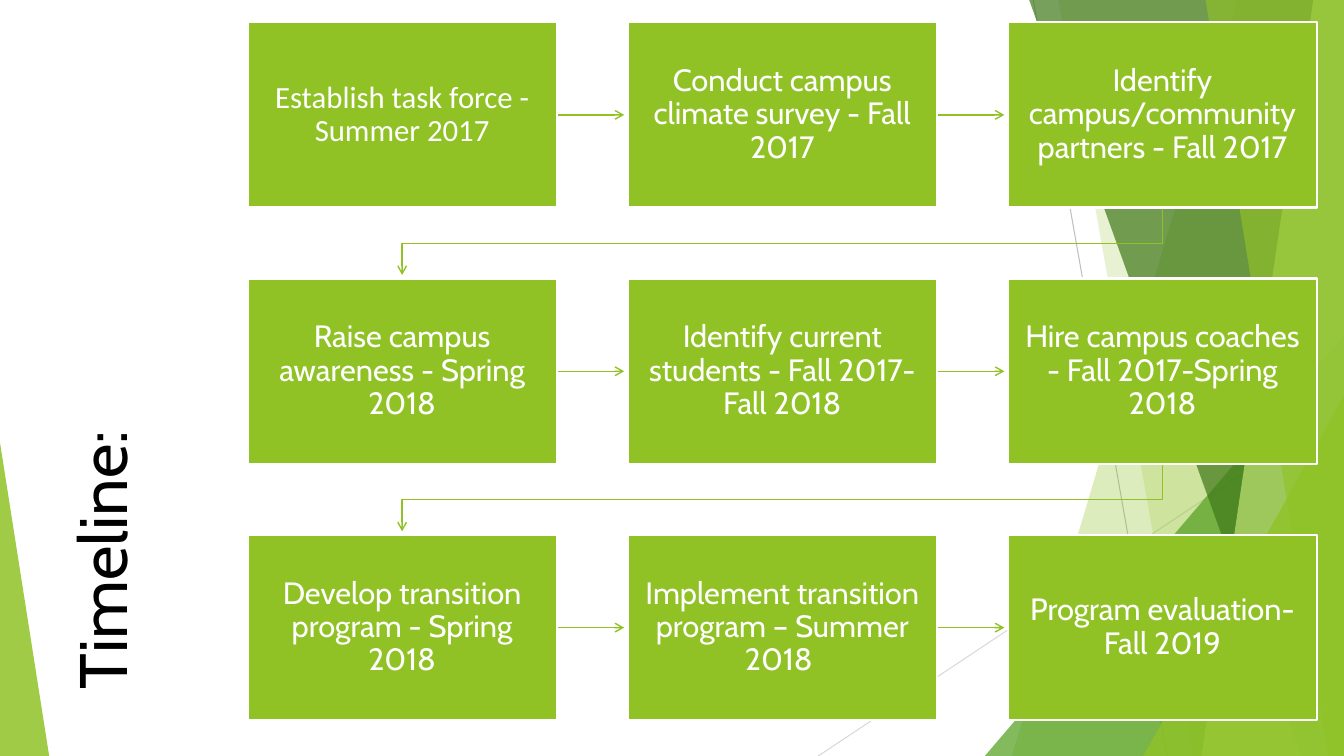
from dataclasses import dataclass

from lxml import etree
from pptx import Presentation
from pptx import util as u
from pptx.dml.color import RGBColor
from pptx.enum import shapes, text
from pptx.oxml import ns
from pptx.util import Cm


@dataclass(frozen=True)
class Theme:
    lime: str = "90C226"
    leaf: str = "54A021"
    moss: str = "3F7819"
    pale: str = "C0E474"
    white: str = "FFFFFF"
    black: str = "000000"
    font: str = "Cabin"
    step: int = 22
    title: int = 48


THEME = Theme()
WIDE, HIGH = 33.87, 19.05
LEFT, TOP = 6.24, 0.56
BOX_W, BOX_H = 7.79, 4.67
STEP_X, STEP_Y = 9.58, 6.46
REACH, BEND = 1.7, 0.9
COLS = 3

STEPS = [
    ("Establish task force - Summer 2017", "Calibri"),
    ("Conduct campus climate survey - Fall 2017", THEME.font),
    ("Identify campus/community partners - Fall 2017", THEME.font),
    ("Raise campus awareness - Spring 2018", THEME.font),
    ("Identify current students - Fall 2017-Fall 2018", THEME.font),
    ("Hire campus coaches - Fall 2017-Spring 2018", THEME.font),
    ("Develop transition program - Spring 2018", THEME.font),
    ("Implement transition program – Summer 2018 ", THEME.font),
    ("Program evaluation- Fall 2019", THEME.font),
]


def paint(shape, color, alpha=100):
    shape.shadow.inherit = False
    shape.fill.solid()
    shape.fill.fore_color.rgb = RGBColor.from_string(color)
    shape.line.fill.background()
    if alpha < 100:
        tint = shape.fill._xPr.find(".//" + ns.qn("a:srgbClr"))
        etree.SubElement(tint, ns.qn("a:alpha")).set("val", str(alpha * 1000))


def stroke(line, color, width):
    line.color.rgb = RGBColor.from_string(color)
    line.width = u.Pt(width)


def add_head(line):
    etree.SubElement(line._get_or_add_ln(), ns.qn("a:tailEnd")).set("type", "arrow")


def write(shape, words, font, size, color):
    frame = shape.text_frame
    frame.text = words
    frame.word_wrap = True
    face = frame.paragraphs[0].runs[0].font
    face.name = font
    face.size = u.Pt(size)
    face.color.rgb = RGBColor.from_string(color)
    return frame


def add_line(slide, start, end, color, width):
    link = slide.shapes.add_connector(
        shapes.MSO_CONNECTOR.STRAIGHT, *map(Cm, start + end))
    stroke(link.line, color, width)
    etree.SubElement(link._element.spPr, ns.qn("a:effectLst"))
    return link


def add_path(slide, points, close):
    spots = [(Cm(x), Cm(y)) for x, y in points]
    pen = slide.shapes.build_freeform(*spots[0])
    pen.add_line_segments(spots[1:], close=close)
    return pen.convert_to_shape()


def add_wedge(slide, top, base, color, alpha):
    points = [(top, -0.02), (WIDE, -0.02), (WIDE, HIGH), (base, HIGH)]
    paint(add_path(slide, points, True), color, alpha)


def add_peak(slide, left, top, width, apex, color, alpha):
    peak = slide.shapes.add_shape(
        shapes.MSO_SHAPE.ISOSCELES_TRIANGLE,
        Cm(left), Cm(top), Cm(width), Cm(HIGH - top))
    peak.adjustments[0] = apex
    paint(peak, color, alpha)


def add_decor(slide):
    add_line(slide, (26.04, 0), (29.41, HIGH), "BFBFBF", 0.75)
    add_line(slide, (WIDE, 10.24), (20.62, HIGH), "D9D9D9", 0.75)
    add_wedge(slide, 31.19, 25.5, THEME.lime, 30)
    add_wedge(slide, 26.67, 30.05, THEME.lime, 20)
    add_peak(slide, 24.82, 8.46, 9.05, 1, THEME.leaf, 72)
    add_wedge(slide, 25.93, 32.79, THEME.moss, 70)
    add_wedge(slide, 33.1, 30.28, THEME.pale, 70)
    add_wedge(slide, 30.38, 33.48, THEME.lime, 65)
    add_peak(slide, 28.81, 9.98, 5.06, 1, THEME.lime, 80)
    add_peak(slide, 0, 11.15, 1.24, 0, THEME.lime, 85)


def add_arrow(slide, left, top):
    start = (left + BOX_W, top + BOX_H / 2)
    end = (start[0] + REACH, start[1])
    add_head(add_line(slide, start, end, THEME.lime, 1).line)


def add_turn(slide, left, top):
    right, home = left + BOX_W / 2, LEFT + BOX_W / 2
    base = top + BOX_H
    turn = add_path(slide, [(right, base), (right, base + BEND),
                            (home, base + BEND), (home, base + REACH)], False)
    turn.shadow.inherit = False
    turn.fill.background()
    stroke(turn.line, THEME.lime, 1)
    add_head(turn.line)


def add_step(slide, left, top, words, font):
    box = slide.shapes.add_shape(
        shapes.MSO_SHAPE.RECTANGLE, Cm(left), Cm(top), Cm(BOX_W), Cm(BOX_H))
    paint(box, THEME.lime)
    stroke(box.line, THEME.white, 1.5)
    frame = write(box, words, font, THEME.step, THEME.white)
    frame.margin_left = frame.margin_right = Cm(0.43)
    frame.margin_top = frame.margin_bottom = Cm(0.43)
    frame.vertical_anchor = text.MSO_ANCHOR.MIDDLE
    frame.paragraphs[0].alignment = text.PP_ALIGN.CENTER
    frame.paragraphs[0].line_spacing = 0.9


def add_flow(slide):
    for index, (words, font) in enumerate(STEPS):
        row, col = divmod(index, COLS)
        left, top = LEFT + col * STEP_X, TOP + row * STEP_Y
        if col < COLS - 1:
            add_arrow(slide, left, top)
        elif index < len(STEPS) - 1:
            add_turn(slide, left, top)
        add_step(slide, left, top, words, font)


def add_title(slide):
    title = slide.shapes.add_textbox(Cm(-5.79), Cm(4.06), Cm(20.73), Cm(6.38))
    title.rotation = 270
    write(title, "Timeline:", THEME.font, THEME.title, THEME.black)


def main():
    deck = Presentation()
    deck.slide_width, deck.slide_height = Cm(WIDE), Cm(HIGH)
    slide = deck.slides.add_slide(deck.slide_layouts[6])
    add_decor(slide)
    add_flow(slide)
    add_title(slide)
    deck.save("out.pptx")


if __name__ == "__main__":
    main()
